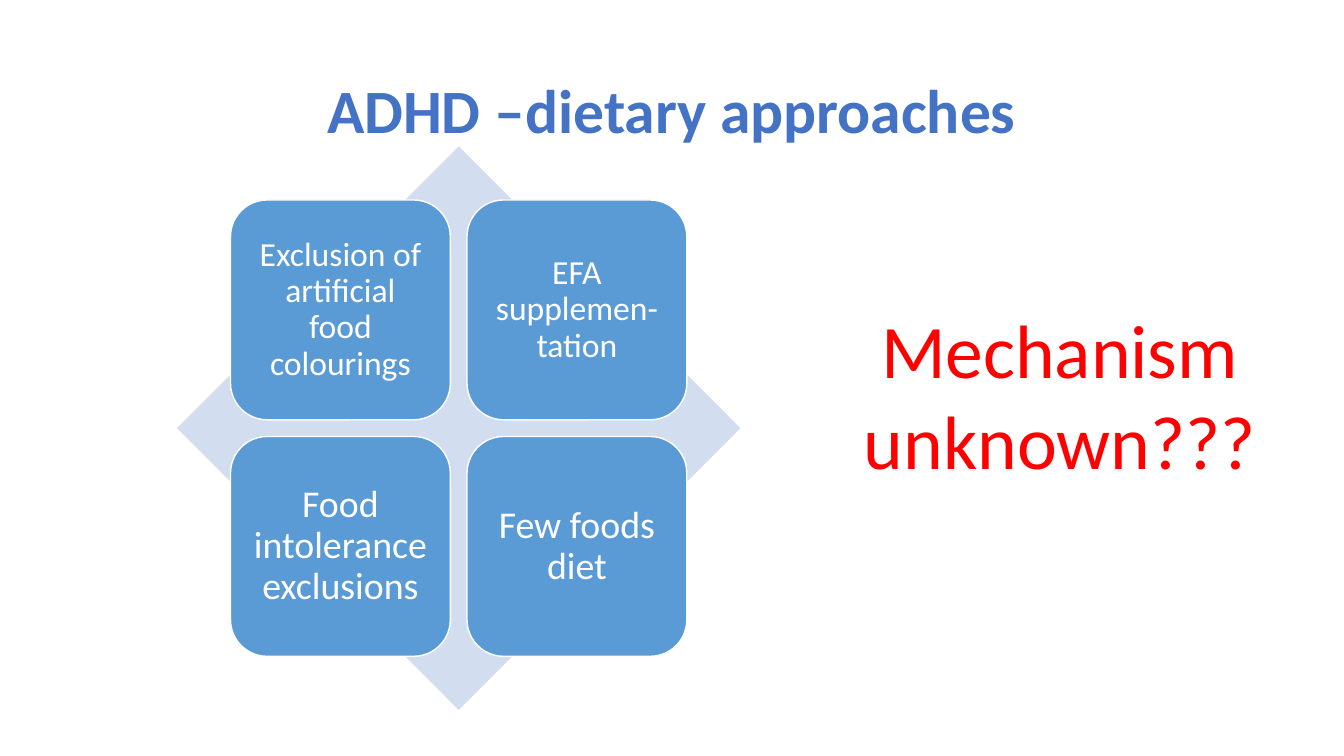
from pptx import Presentation
from pptx import util as u
from pptx.dml.color import RGBColor
from pptx.enum import shapes, text

COLORS = {
    "title": "4472C4",
    "diamond": "D2DEEF",
    "tile": "5B9BD5",
    "white": "FFFFFF",
    "alert": "FF0000",
}
APPROACHES = [
    ("Exclusion of artificial food colourings", 24),
    ("EFA supplemen-tation", 24),
    ("Food intolerance exclusions", 27),
    ("Few foods diet", 27),
]


def rgb(name):
    return RGBColor.from_string(COLORS[name])


def write(tf, *lines, size, color, bold=False, spacing=None, font="Calibri"):
    tf.vertical_anchor = text.MSO_ANCHOR.MIDDLE
    for i, line in enumerate(lines):
        p = tf.add_paragraph() if i else tf.paragraphs[0]
        p.alignment = text.PP_ALIGN.CENTER
        p.line_spacing = spacing
        r = p.add_run()
        r.text = line
        r.font.name = font
        r.font.size = u.Pt(size)
        r.font.bold = bold
        r.font.color.rgb = rgb(color)


class Deck:
    def __init__(self):
        self.prs = Presentation()
        self.prs.slide_width = u.Cm(33.87)
        self.prs.slide_height = u.Cm(19.05)
        self.s = self.prs.slides.add_slide(self.prs.slide_layouts[5])

    def title(self, line, x, y, w, h):
        sp = self.s.shapes.title
        sp.left, sp.top, sp.width, sp.height = map(u.Cm, (x, y, w, h))
        write(sp.text_frame, line, size=44, color="title", bold=True, spacing=0.9)

    def shape(self, kind, x, y, size, fill, line=None):
        sp = self.s.shapes.add_shape(kind, *map(u.Cm, (x, y, size, size)))
        sp.shadow.inherit = False
        sp.fill.solid()
        sp.fill.fore_color.rgb = rgb(fill)
        if line:
            sp.line.color.rgb = rgb(line)
            sp.line.width = u.Pt(1)
        else:
            sp.line.fill.background()
        return sp

    def tile(self, line, x, y, side, size):
        sp = self.shape(shapes.MSO_SHAPE.ROUNDED_RECTANGLE, x, y, side, "tile", "white")
        tf = sp.text_frame
        tf.word_wrap = True
        inset = u.Pt(size * 0.3)
        tf.margin_left = tf.margin_right = tf.margin_top = tf.margin_bottom = inset
        write(tf, line, size=size, color="white", spacing=0.9)

    def label(self, lines, x, y, w, h, size, color):
        sp = self.s.shapes.add_textbox(*map(u.Cm, (x, y, w, h)))
        tf = sp.text_frame
        tf.word_wrap = False
        tf.auto_size = text.MSO_AUTO_SIZE.SHAPE_TO_FIT_TEXT
        write(tf, *lines, size=size, color=color)


def main():
    deck = Deck()
    deck.title("ADHD –dietary approaches", 2.33, 1.01, 29.21, 3.68)

    left, top, diamond = 4.46, 3.69, 14.2
    side, gap = 5.54, 0.42
    margin = (diamond - 2 * side - gap) / 2
    deck.shape(shapes.MSO_SHAPE.DIAMOND, left, top, diamond, "diamond")
    for i, (line, size) in enumerate(APPROACHES):
        row, col = divmod(i, 2)
        x = left + margin + col * (side + gap)
        y = top + margin + row * (side + gap)
        deck.tile(line, x, y, side, size)

    deck.label(["Mechanism", "unknown???"], 21.46, 7.49, 10.49, 4.88, 54, "alert")
    deck.prs.save("out.pptx")


if __name__ == "__main__":
    main()
